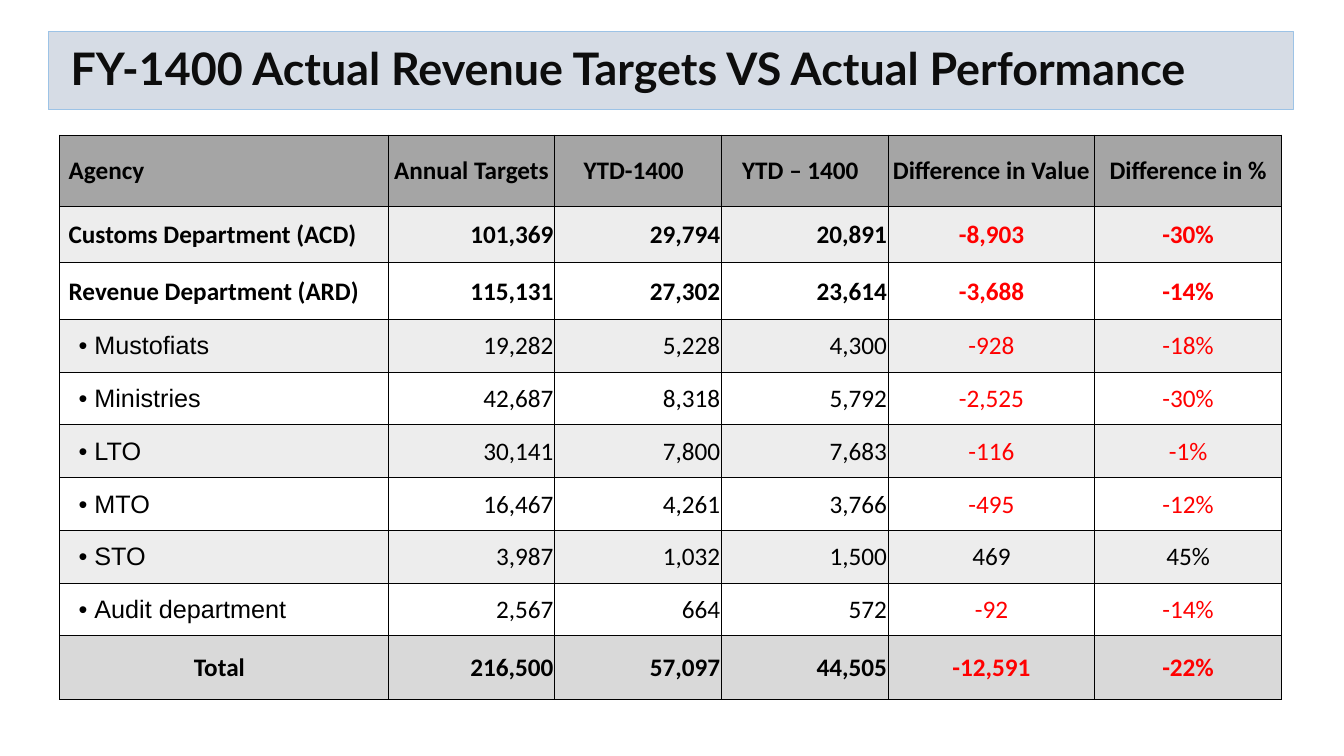
from lxml import etree
from pptx import Presentation
from pptx.dml import color
from pptx.enum import text
from pptx.oxml import ns
from pptx.util import Cm, Pt

BLACK = color.RGBColor(0x00, 0x00, 0x00)
INK = color.RGBColor(0x0D, 0x0D, 0x0D)
RED = color.RGBColor(0xFF, 0x00, 0x00)
WHITE = color.RGBColor(0xFF, 0xFF, 0xFF)
PALE = color.RGBColor(0xED, 0xED, 0xED)
SILVER = color.RGBColor(0xD9, 0xD9, 0xD9)
GREY = color.RGBColor(0xA5, 0xA5, 0xA5)
BLUE = color.RGBColor(0xD6, 0xDC, 0xE5)
SKY = color.RGBColor(0x9D, 0xC3, 0xE6)

LEFT, MID, RIGHT = text.PP_ALIGN.LEFT, text.PP_ALIGN.CENTER, text.PP_ALIGN.RIGHT
MIDDLE = text.MSO_ANCHOR.MIDDLE

TITLE = "FY-1400 Actual Revenue Targets VS Actual Performance"
HEAD = ["Agency", "Annual Targets", "YTD-1400", "YTD – 1400",
        "Difference in Value", "Difference in %"]
MAIN = [
    ["Customs Department (ACD)", "101,369", "29,794", "20,891", "-8,903", "-30%"],
    ["Revenue Department (ARD)", "115,131", "27,302", "23,614", "-3,688", "-14%"],
]
PARTS = [
    ["Mustofiats", "19,282", "5,228", "4,300", "-928", "-18%"],
    ["Ministries", "42,687", "8,318", "5,792", "-2,525", "-30%"],
    ["LTO", "30,141", "7,800", "7,683", "-116", "-1%"],
    ["MTO", "16,467", "4,261", "3,766", "-495", "-12%"],
    ["STO", "3,987", "1,032", "1,500", "469", "45%"],
    ["Audit department", "2,567", "664", "572", "-92", "-14%"],
]
TOTAL = ["Total", "216,500", "57,097", "44,505", "-12,591", "-22%"]

WIDTHS = [8.28, 4.2, 4.2, 4.2, 5.21, 4.7]
HEIGHTS = [1.8] + [1.42] * len(MAIN) + [1.33] * len(PARTS) + [1.59]


def assign(item, values):
    for name, value in values.items():
        setattr(item, name, value)


class Deck:
    """Holds the table style and the current slide."""
    face, size = "Calibri", Pt(18)
    inset, edge = 0.03, Pt(0.5)

    def __init__(self):
        self.file = Presentation()
        assign(self.file, {"slide_width": Cm(33.87), "slide_height": Cm(19.05)})
        self.slide = self.file.slides.add_slide(self.file.slide_layouts[5])

    def title(self, words, box):
        shape = self.slide.shapes.title
        assign(shape, dict(zip(("left", "top", "width", "height"), map(Cm, box))))
        shape.fill.solid()
        shape.fill.fore_color.rgb = BLUE
        shape.line.color.rgb = SKY
        shape.line.width = Pt(0.75)
        frame = shape.text_frame
        assign(frame, {"text": words, "word_wrap": True, "vertical_anchor": MIDDLE,
                       "auto_size": text.MSO_AUTO_SIZE.NONE, "margin_left": Cm(0.56)})
        line = frame.paragraphs[0]
        assign(line, {"alignment": LEFT, "line_spacing": 0.9})
        assign(line.font, {"name": "Lato", "size": Pt(32), "bold": True})
        line.font.color.rgb = INK

    def grid(self, rows, box):
        frame = self.slide.shapes.add_table(len(rows), len(WIDTHS), *map(Cm, box))
        table = frame.table
        assign(table, {"first_row": False, "horz_banding": False})
        for col, width in zip(table.columns, WIDTHS):
            col.width = Cm(width)
        for row, height in zip(table.rows, HEIGHTS):
            row.height = Cm(height)
        for r, row in enumerate(rows):
            for c, words in enumerate(row):
                self.cell(table.cell(r, c), words, r, c, len(rows) - 1)

    def cell(self, cell, words, r, c, last):
        head, total = r == 0, r == last
        part = len(MAIN) < r < last
        name = c == 0 and not total
        left, right = self.inset, self.inset
        if name:
            left = 0.48 if part else 0.23
        elif head and c in (2, 3) or total and c == 0:
            right = 0.25
        align = LEFT if name else RIGHT if 0 < c < 4 and not head else MID

        self.border(cell)
        cell.fill.solid()
        cell.fill.fore_color.rgb = (GREY if head else SILVER if total
                                    else PALE if r % 2 else WHITE)
        assign(cell, {"text": words, "vertical_anchor": MIDDLE,
                      "margin_left": Cm(left), "margin_right": Cm(right),
                      "margin_top": Cm(0.03), "margin_bottom": 0})
        line = cell.text_frame.paragraphs[0]
        line.alignment = align
        font = line.runs[0].font
        assign(font, {"name": "Arial" if part and name else self.face,
                      "size": self.size, "bold": not part})
        font.color.rgb = RED if words.startswith("-") else BLACK
        if part and name:
            self.bullet(line)

    def border(self, cell):
        props = cell._tc.get_or_add_tcPr()
        for side in ("lnL", "lnR", "lnT", "lnB"):
            line = etree.SubElement(props, ns.qn("a:" + side), w=str(self.edge))
            fill = etree.SubElement(line, ns.qn("a:solidFill"))
            etree.SubElement(fill, ns.qn("a:srgbClr"), val=str(BLACK))

    def bullet(self, line):
        props = line._p.get_or_add_pPr()
        gap = Cm(0.4)
        props.set("marL", str(gap))
        props.set("indent", str(-gap))
        etree.SubElement(props, ns.qn("a:buFont"), typeface="Arial")
        etree.SubElement(props, ns.qn("a:buChar"), char="•")


def main():
    deck = Deck()
    deck.title(TITLE, (1.22, 0.79, 31.37, 1.98))
    deck.grid([HEAD, *MAIN, *PARTS, TOTAL], (1.5, 3.4, sum(WIDTHS), sum(HEIGHTS)))
    deck.file.save("out.pptx")


if __name__ == "__main__":
    main()
